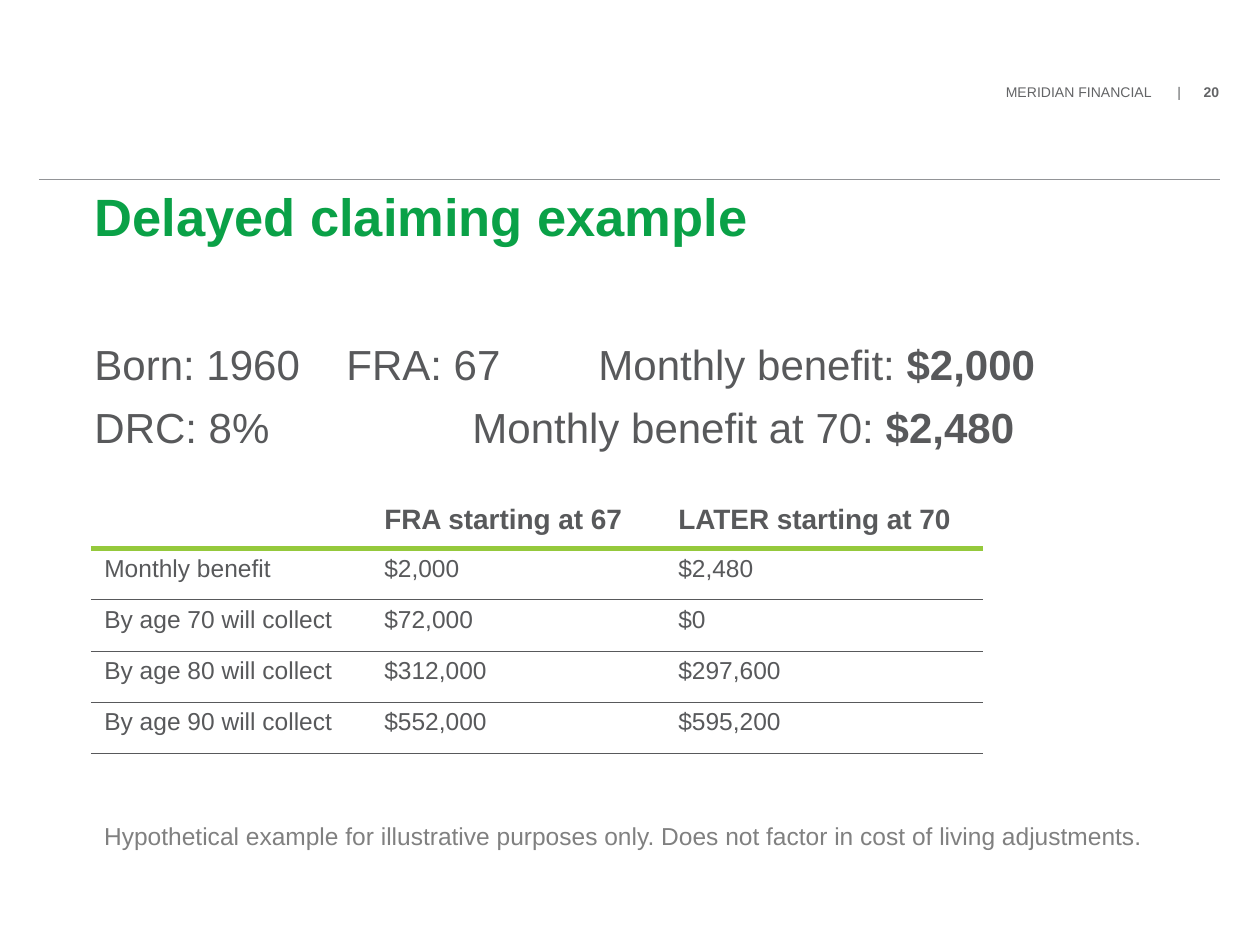
from dataclasses import dataclass

import pptx
import pptx.dml.color
import pptx.enum.shapes
import pptx.enum.text
import pptx.oxml.ns
import pptx.util
from lxml import etree

Pt = pptx.util.Pt
RGBColor = pptx.dml.color.RGBColor
qn = pptx.oxml.ns.qn

GREEN = RGBColor(0x0A, 0xA1, 0x47)
LIME = RGBColor(0x95, 0xC9, 0x3C)
INK = RGBColor(0x58, 0x59, 0x5B)
HEADER_GREY = RGBColor(0x63, 0x64, 0x66)
RULE_GREY = RGBColor(0x92, 0x94, 0x97)
NOTE_GREY = RGBColor(0x80, 0x80, 0x80)
WHITE = RGBColor(0xFF, 0xFF, 0xFF)
FONT = "Arial"


@dataclass(frozen=True)
class Box:
    left: float
    top: float
    width: float
    height: float


@dataclass(frozen=True)
class Line:
    label: str
    value: str = ""
    tabs: tuple[float, ...] = ()


@dataclass(frozen=True)
class Style:
    size: float
    color: RGBColor
    bold: bool = False


@dataclass(frozen=True)
class Border:
    color: RGBColor
    width: float


HAIRLINE = Border(INK, 0.5)
HEAVY = Border(LIME, 3)
BLANK = Border(WHITE, 1)

BENEFITS = (
    Line("Born: 1960\tFRA: 67\tMonthly benefit: ", "$2,000", (144, 288)),
    Line("DRC: 8%\t\tMonthly benefit at 70: ", "$2,480", (144, 216)),
)
COLUMN_WIDTHS = (160, 168, 181)
ROW_HEIGHT = 29.2
CLAIMS = (
    ("", "FRA starting at 67", "LATER starting at 70"),
    ("Monthly benefit", "$2,000", "$2,480"),
    ("By age 70 will collect", "$72,000", "$0"),
    ("By age 80 will collect", "$312,000", "$297,600"),
    ("By age 90 will collect", "$552,000", "$595,200"),
)


def place(shape, box: Box) -> None:
    shape.left, shape.top = Pt(box.left), Pt(box.top)
    shape.width, shape.height = Pt(box.width), Pt(box.height)


def style_font(font, style: Style) -> None:
    font.name = FONT
    font.size = Pt(style.size)
    font.bold = style.bold
    font.color.rgb = style.color


def set_frame(frame, left: float = 0, top: float = 0, right: float = 0, bottom: float = 0) -> None:
    frame.word_wrap = True
    frame.auto_size = pptx.enum.text.MSO_AUTO_SIZE.NONE
    frame.vertical_anchor = pptx.enum.text.MSO_ANCHOR.TOP
    frame.margin_left, frame.margin_top = Pt(left), Pt(top)
    frame.margin_right, frame.margin_bottom = Pt(right), Pt(bottom)


def add_frame(slide, box: Box, *insets: float):
    frame = slide.shapes.add_textbox(*map(Pt, (box.left, box.top, box.width, box.height))).text_frame
    set_frame(frame, *insets)
    return frame


def write_line(paragraph, line: Line, style: Style) -> None:
    if line.tabs:
        tab_list = etree.SubElement(paragraph._p.get_or_add_pPr(), qn("a:tabLst"))
        for position in line.tabs:
            etree.SubElement(tab_list, qn("a:tab"), pos=str(Pt(position)), algn="l")
    paragraph.text = line.label
    if line.value:
        paragraph.add_run().text = line.value
    for run in paragraph.runs:
        style_font(run.font, style)
    if line.value:
        paragraph.runs[-1].font.bold = True


def set_borders(cell, top: Border, bottom: Border) -> None:
    properties = cell._tc.get_or_add_tcPr()
    for side, border in (("L", BLANK), ("R", BLANK), ("T", top), ("B", bottom)):
        edge = etree.SubElement(properties, qn(f"a:ln{side}"), w=str(Pt(border.width)))
        fill = etree.SubElement(edge, qn("a:solidFill"))
        etree.SubElement(fill, qn("a:srgbClr"), val=str(border.color))


def add_header(slide) -> None:
    frame = add_frame(slide, Box(573.8, 46, 125.3, 11), 1, 1.5)
    write_line(
        frame.paragraphs[0],
        Line("MERIDIAN FINANCIAL\t|\t", "20", (98, 113)),
        Style(8, HEADER_GREY),
    )
    rule = slide.shapes.add_connector(
        pptx.enum.shapes.MSO_CONNECTOR.STRAIGHT, Pt(22.3), Pt(102.4), Pt(697), Pt(102.4)
    )
    rule.line.color.rgb = RULE_GREY
    rule.line.width = Pt(0.5)
    etree.SubElement(rule._element.spPr, qn("a:effectLst"))


def add_title(slide) -> None:
    title = slide.shapes.title
    place(title, Box(54, 110, 612, 75.6))
    set_frame(title.text_frame)
    heading = title.text_frame.paragraphs[0]
    write_line(heading, Line("Delayed claiming example"), Style(30, GREEN, True))
    heading.alignment = pptx.enum.text.PP_ALIGN.LEFT
    heading.line_spacing = Pt(31)


def add_benefits(slide) -> None:
    frame = add_frame(slide, Box(54, 196, 612, 323))
    for index, benefit in enumerate(BENEFITS):
        paragraph = frame.add_paragraph() if index else frame.paragraphs[0]
        write_line(paragraph, benefit, Style(24, INK))
        paragraph.line_spacing = Pt(26)
        if index:
            paragraph.space_before = Pt(10)


def add_claims(slide) -> None:
    table = slide.shapes.add_table(
        len(CLAIMS), len(COLUMN_WIDTHS), Pt(52.4), Pt(284.4),
        Pt(sum(COLUMN_WIDTHS)), Pt(ROW_HEIGHT * len(CLAIMS)),
    ).table
    table.first_row = table.horz_banding = False
    for column, width in zip(table.columns, COLUMN_WIDTHS):
        column.width = Pt(width)
    edges = (BLANK, HEAVY) + (HAIRLINE,) * (len(CLAIMS) - 1)
    for row_index, texts in enumerate(CLAIMS):
        table.rows[row_index].height = Pt(ROW_HEIGHT)
        style = Style(14, INK) if row_index else Style(16, INK, True)
        for column_index, text in enumerate(texts):
            cell = table.cell(row_index, column_index)
            set_borders(cell, edges[row_index], edges[row_index + 1])
            cell.fill.background()
            if text:
                write_line(cell.text_frame.paragraphs[0], Line(text), style)


def add_note(slide) -> None:
    frame = add_frame(slide, Box(52.4, 465.8, 624, 24.2), 7.2, 3.6, 7.2, 3.6)
    note = "Hypothetical example for illustrative purposes only. Does not factor in cost of living adjustments."
    write_line(frame.paragraphs[0], Line(note), Style(14, NOTE_GREY))


def main() -> None:
    deck = pptx.Presentation()
    deck.slide_width, deck.slide_height = Pt(720), Pt(540)
    slide = deck.slides.add_slide(deck.slide_layouts[5])
    add_header(slide)
    add_title(slide)
    add_benefits(slide)
    add_note(slide)
    add_claims(slide)
    deck.save("out.pptx")


if __name__ == "__main__":
    main()
